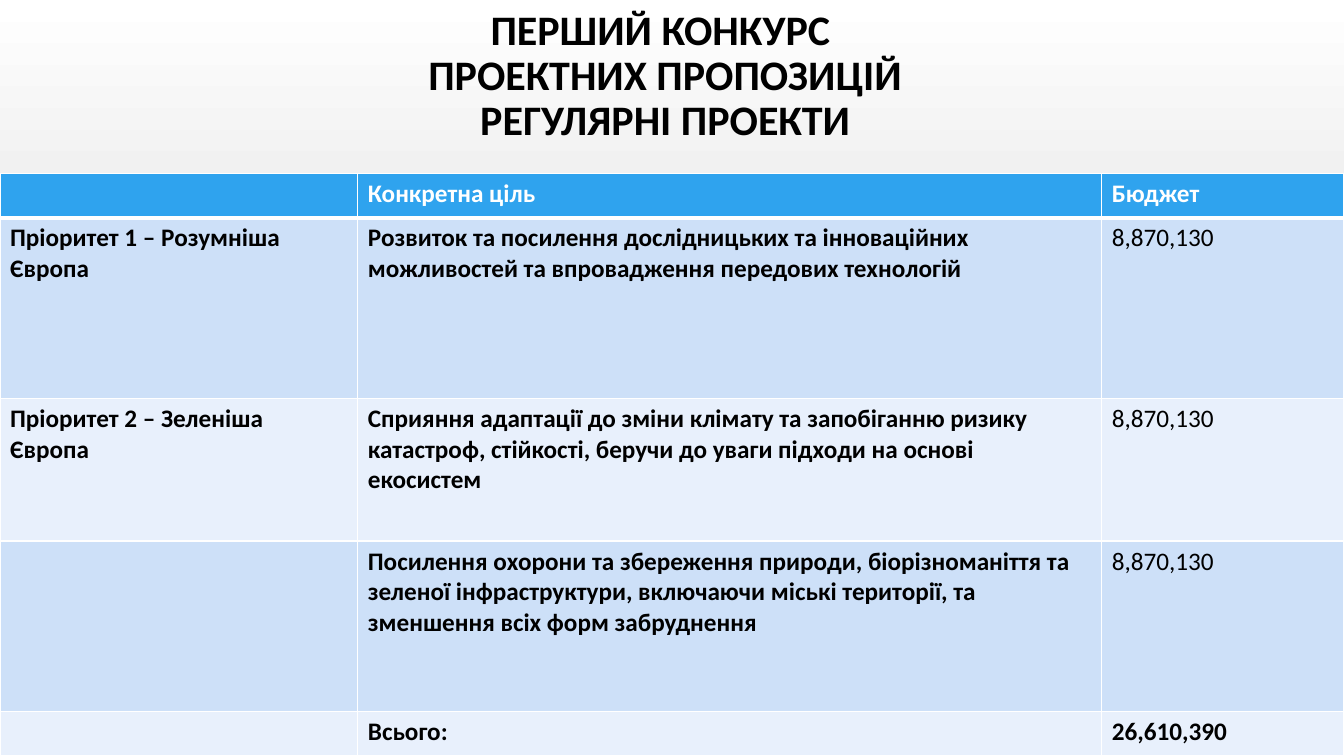
from lxml.etree import SubElement as Sub
from pptx import Presentation
from pptx.dml.color import RGBColor as RGB
from pptx.enum.text import MSO_ANCHOR as Anchor, PP_ALIGN as Align
from pptx.oxml.ns import qn
from pptx.util import Pt

# Content
TITLE = "ПЕРШИЙ КОНКУРС \vПРОЕКТНИХ ПРОПОЗИЦІЙ\vРЕГУЛЯРНІ ПРОЕКТИ"
ROWS = [
    ("", "Конкретна ціль", "Бюджет"),
    ("Пріоритет 1 – Розумніша Європа",
     "Розвиток та посилення дослідницьких та інноваційних можливостей "
     "та впровадження передових технологій", "8,870,130"),
    ("Пріоритет 2 – Зеленіша Європа",
     "Сприяння адаптації до зміни клімату та запобіганню ризику катастроф, "
     "стійкості, беручи до уваги підходи на основі екосистем", "8,870,130"),
    ("",
     "Посилення охорони та збереження природи, біорізноманіття та зеленої "
     "інфраструктури, включаючи міські території, та зменшення всіх форм "
     "забруднення", "8,870,130"),
    ("", "Всього:", "26,610,390"),
]

# Sizes and colours
WIDE, HIGH = 960, 540
COLS = (255.6, 531.4, 173)
TALL = (31.5, 129, 102, 122, 31.5)
BLACK = RGB(0x00, 0x00, 0x00)
WHITE = RGB(0xFF, 0xFF, 0xFF)
GREY = RGB(0xB9, 0xB9, 0xB9)
BLUE = RGB(0x2F, 0xA3, 0xEE)
BANDS = (RGB(0xE8, 0xF0, 0xFC), RGB(0xCD, 0xE0, 0xF8))


def write(frame, text, size=18, color=BLACK, bold=True, align=Align.LEFT,
          space=1.0):
    para = frame.paragraphs[0]
    para.text = text
    para.alignment = align
    para.line_spacing = space
    for font in [para.font] + [run.font for run in para.runs]:
        font.name = "Calibri"
        font.size = Pt(size)
        font.bold = bold
        font.color.rgb = color


def edge(cell, top, low):
    props = cell._tc.get_or_add_tcPr()
    for side, width in (("L", 1), ("R", 1), ("T", top), ("B", low)):
        line = Sub(props, qn(f"a:ln{side}"), w=str(Pt(width)))
        fill = Sub(line, qn("a:solidFill"))
        Sub(fill, qn("a:srgbClr"), val=str(WHITE))


def main():
    deck = Presentation()
    deck.slide_width, deck.slide_height = Pt(WIDE), Pt(HIGH)
    slide = deck.slides.add_slide(deck.slide_layouts[6])

    # Background
    back = slide.background.fill
    back.gradient()
    back.gradient_angle = 270
    for stop, color, at in zip(back.gradient_stops, (WHITE, GREY), (0, 1)):
        stop.color.rgb = color
        stop.position = at

    # Title
    box = slide.shapes.add_textbox(Pt(68.4), Pt(0), Pt(813.6), Pt(110))
    frame = box.text_frame
    frame.word_wrap = True
    frame.vertical_anchor = Anchor.MIDDLE
    write(frame, TITLE, size=30, align=Align.CENTER, space=0.9)

    # Table, flush with the bottom of the slide
    size = sum(TALL)
    table = slide.shapes.add_table(len(ROWS), len(COLS), Pt(0),
                                   Pt(HIGH - size), Pt(WIDE), Pt(size)).table
    for col, width in zip(table.columns, COLS):
        col.width = Pt(width)
    for r, texts in enumerate(ROWS):
        table.rows[r].height = Pt(TALL[r])
        head, last = r == 0, r == len(ROWS) - 1
        for c, text in enumerate(texts):
            cell = table.cell(r, c)
            edge(cell, top=3 if r == 1 else 1, low=3 if head else 1)
            cell.fill.solid()
            cell.fill.fore_color.rgb = BLUE if head else BANDS[r % 2]
            write(cell.text_frame, text, color=WHITE if head else BLACK,
                  bold=head or last or c < 2)

    deck.save("out.pptx")


if __name__ == "__main__":
    main()
